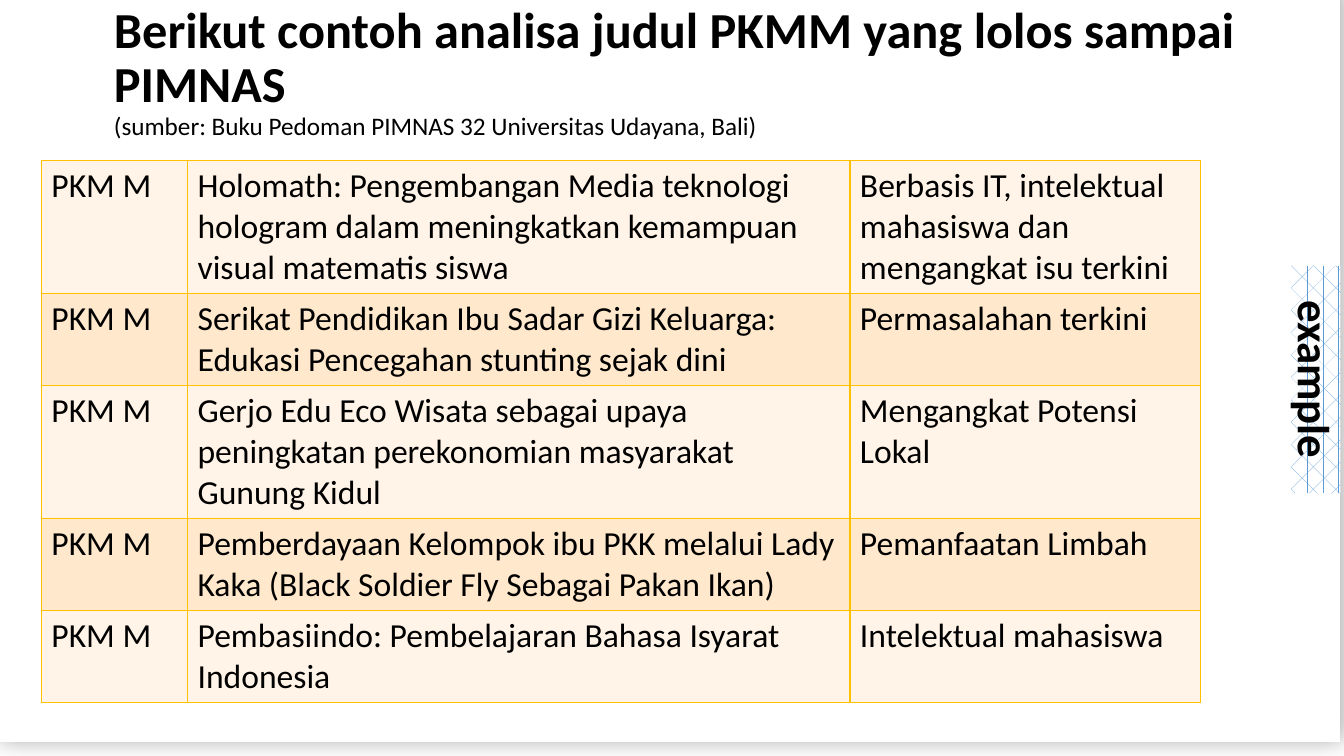
from lxml.etree import SubElement
from pptx import Presentation
from pptx.dml.color import RGBColor
from pptx.enum.dml import MSO_PATTERN
from pptx.enum.shapes import MSO_SHAPE
from pptx.enum.text import MSO_ANCHOR, MSO_AUTO_SIZE, PP_ALIGN
from pptx.oxml.ns import qn
from pptx.util import Inches, Pt

WIDTH, HEIGHT = 13.33, 7.5
LINE, PADDING = 0.4, 0.1  # table text line and cell padding, inches
COLORS = {"white": "FFFFFF", "text": "000000", "border": "FFC000",
          "odd": "FFF4E7", "even": "FFE8CC", "pattern": "5B9BD5"}
FORMATS = {
    "title": {"size": Pt(36), "bold": True},
    "source": {"size": Pt(18), "bold": False},
    "cell": {"size": Pt(24), "bold": False},
    "tab": {"size": Pt(32), "bold": True},
}
COLUMNS = [1.45, 6.57, 3.48]
# Lines of text, title of the proposal, analysis
ROWS = [
    (3, "Holomath: Pengembangan Media teknologi hologram dalam meningkatkan "
        "kemampuan visual matematis siswa",
     "Berbasis IT, intelektual mahasiswa dan mengangkat isu terkini"),
    (2, "Serikat Pendidikan Ibu Sadar Gizi Keluarga: Edukasi Pencegahan "
        "stunting sejak dini", "Permasalahan terkini"),
    (3, "Gerjo Edu Eco Wisata sebagai upaya peningkatan perekonomian "
        "masyarakat Gunung Kidul", "Mengangkat Potensi Lokal"),
    (2, "Pemberdayaan Kelompok ibu PKK melalui Lady Kaka (Black Soldier Fly "
        "Sebagai Pakan Ikan)", "Pemanfaatan Limbah"),
    (2, "Pembasiindo: Pembelajaran Bahasa Isyarat Indonesia",
     "Intelektual mahasiswa"),
]


def rgb(name):
    return RGBColor.from_string(COLORS[name])


def add_text(p, text, style):
    r = p.add_run()
    r.text = text
    r.font.name = "Calibri"
    r.font.color.rgb = rgb("text")
    for key, value in FORMATS[style].items():
        setattr(r.font, key, value)


def add_rect(slide, left, top, width, height):
    sp = slide.shapes.add_shape(MSO_SHAPE.RECTANGLE, Inches(left), Inches(top),
                                Inches(width), Inches(height))
    sp.shadow.inherit = False
    sp.line.fill.background()
    return sp


def add_panel(slide):
    sp = add_rect(slide, -0.04, -0.14, WIDTH, HEIGHT)
    sp.fill.solid()
    sp.fill.fore_color.rgb = rgb("white")
    effects = sp._element.spPr.find(qn("a:effectLst"))
    shadow = SubElement(effects, qn("a:outerShdw"), blurRad=str(Pt(17)),
                        dist=str(Pt(3)), dir="0", algn="ctr", rotWithShape="0")
    color = SubElement(shadow, qn("a:srgbClr"), val=COLORS["text"])
    SubElement(color, qn("a:alpha"), val="35000")


def add_title(slide):
    sp = slide.shapes.title
    sp.left, sp.top, sp.width, sp.height = map(Inches, (1.03, 0, 11.5, 1.45))
    tf = sp.text_frame
    tf.auto_size = MSO_AUTO_SIZE.NONE
    tf.vertical_anchor = MSO_ANCHOR.MIDDLE
    p = tf.paragraphs[0]
    p.alignment, p.line_spacing = PP_ALIGN.LEFT, 0.9
    add_text(p, "Berikut contoh analisa judul PKMM yang lolos sampai PIMNAS ", "title")
    p.add_line_break()
    add_text(p, "(sumber: Buku Pedoman PIMNAS 32 Universitas Udayana, Bali)", "source")


def set_borders(cell):
    tcPr = cell._tc.get_or_add_tcPr()
    for index, side in enumerate(("lnL", "lnR", "lnT", "lnB")):
        ln = SubElement(tcPr, qn(f"a:{side}"), w=str(Pt(1)))
        fill = SubElement(ln, qn("a:solidFill"))
        SubElement(fill, qn("a:srgbClr"), val=COLORS["border"])
        tcPr.insert(index, ln)  # borders come before the fill


def add_analysis_table(slide):
    heights = [lines * LINE + PADDING for lines, *_ in ROWS]
    table = slide.shapes.add_table(
        len(ROWS), len(COLUMNS), Inches(0.41), Inches(1.59),
        Inches(sum(COLUMNS)), Inches(sum(heights))).table
    table.first_row = False
    for column, width in zip(table.columns, COLUMNS):
        column.width = Inches(width)
    for i, (_, proposal, analysis) in enumerate(ROWS):
        table.rows[i].height = Inches(heights[i])
        for cell, text in zip(table.rows[i].cells, ("PKM M", proposal, analysis)):
            add_text(cell.text_frame.paragraphs[0], text, "cell")
            cell.fill.solid()
            cell.fill.fore_color.rgb = rgb("even" if i % 2 else "odd")
            set_borders(cell)


def add_side_tab(slide):
    sp = add_rect(slide, 11.92, 3.52, 2.26, 0.49)
    sp.rotation = 90
    sp.fill.patterned()
    sp.fill.pattern = MSO_PATTERN.DIVOT
    sp.fill.fore_color.rgb = rgb("pattern")
    sp.fill.back_color.rgb = rgb("white")
    tf = sp.text_frame
    tf.vertical_anchor = MSO_ANCHOR.MIDDLE
    p = tf.paragraphs[0]
    p.alignment = PP_ALIGN.CENTER
    add_text(p, "example", "tab")


def main():
    prs = Presentation()
    prs.slide_width, prs.slide_height = Inches(WIDTH), Inches(HEIGHT)
    slide = prs.slides.add_slide(prs.slide_layouts.get_by_name("Title Only"))
    add_panel(slide)
    # Keep the title in front of the panel
    title = slide.shapes.title._element
    title.getparent().append(title)
    add_title(slide)
    add_analysis_table(slide)
    add_side_tab(slide)
    prs.save("out.pptx")


if __name__ == "__main__":
    main()
